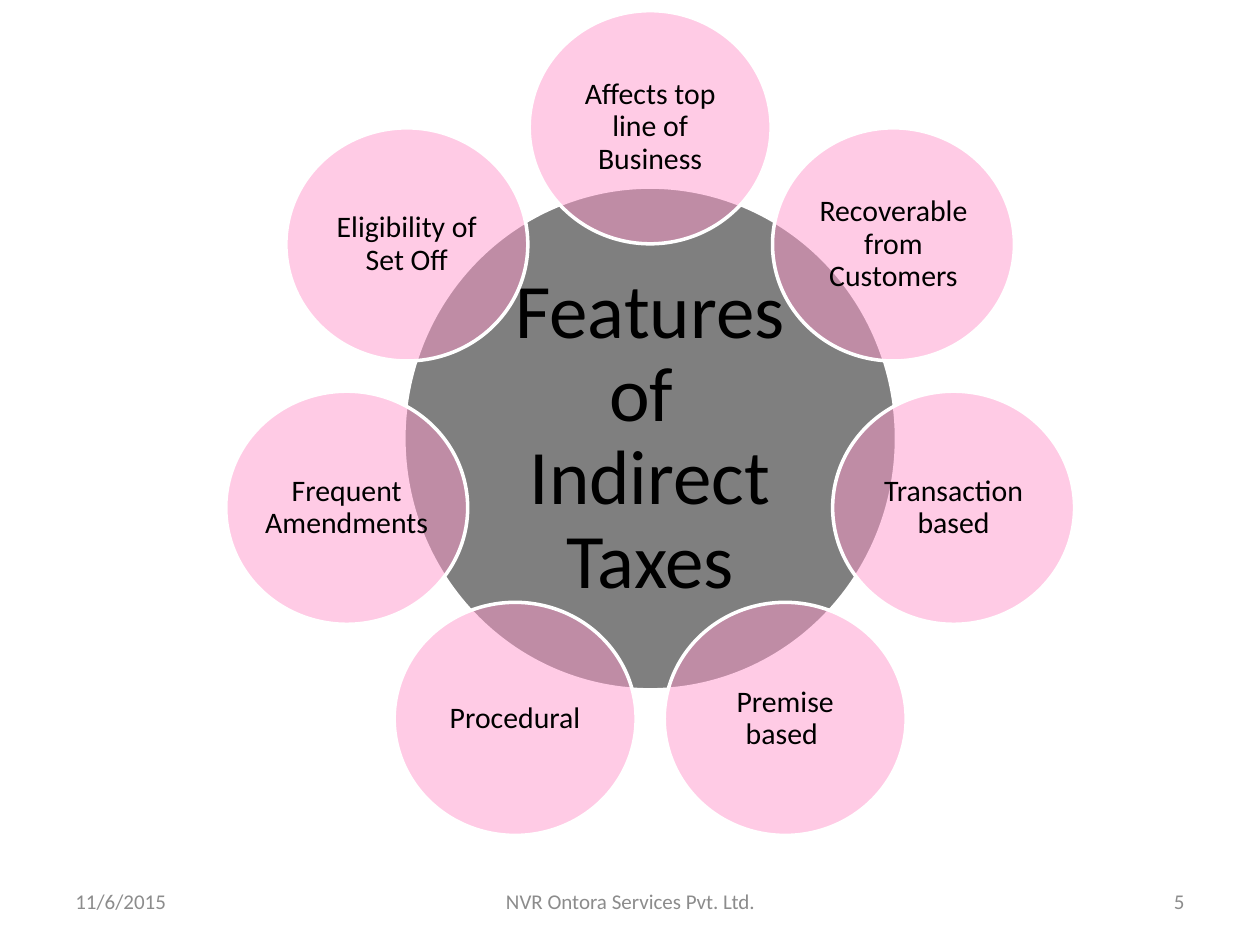
"""Build a radial slide on the features of indirect taxes."""
from dataclasses import dataclass
from math import cos, pi, sin

from lxml.etree import SubElement
from pptx import Presentation
from pptx.dml.color import RGBColor
from pptx.enum.shapes import MSO_SHAPE
from pptx.enum.text import MSO_ANCHOR, PP_ALIGN
from pptx.oxml.ns import qn
from pptx.util import Inches, Pt

HUB = "Features of \vIndirect Taxes"
FEATURES = [
    "Affects top line of Business",
    "Recoverable from Customers",
    "Transaction based",
    "Premise based ",
    "Procedural",
    "Frequent Amendments",
    "Eligibility of Set Off",
]
FOOTERS = [
    ("11/6/2015", 0.5, 2.33, PP_ALIGN.LEFT),
    ("NVR Ontora Services Pvt. Ltd.", 3.42, 3.17, PP_ALIGN.CENTER),
    ("5", 7.17, 2.33, PP_ALIGN.RIGHT),
]


@dataclass(frozen=True)
class Theme:
    font: str = "Calibri"
    text: str = "000000"
    footer: str = "8C8C8C"
    hub: str = "000000"
    feature: str = "FF99CC"
    outline: str = "FFFFFF"
    opacity: int = 50
    hub_size: int = 44
    feature_size: int = 17
    footer_size: int = 12


THEME = Theme()
SLIDE_WIDTH, SLIDE_HEIGHT = 10, 7.5
CENTER_X, CENTER_Y = 5.16, 3.48
ORBIT = 2.47
HUB_EXTENT = (3.91, 3.99)
FEATURE_EXTENT = (1.92, 1.85)
FOOTER_TOP, FOOTER_HEIGHT = 6.95, 0.4


def write(shape, text, size, color, align):
    frame = shape.text_frame
    frame.word_wrap = True
    frame.vertical_anchor = MSO_ANCHOR.MIDDLE
    paragraph = frame.paragraphs[0]
    paragraph.text = text
    paragraph.alignment = align
    paragraph.font.name = THEME.font
    paragraph.font.size = Pt(size)
    paragraph.font.color.rgb = RGBColor.from_string(color)
    return frame


def add_circle(slide, text, center, extent, fill, size, inset):
    left, top = (middle - length / 2 for middle, length in zip(center, extent))
    shape = slide.shapes.add_shape(
        MSO_SHAPE.OVAL, *map(Inches, (left, top, *extent)))
    shape.shadow.inherit = False
    shape.fill.solid()
    shape.fill.fore_color.rgb = RGBColor.from_string(fill)
    color = shape.fill._xPr.find(qn("a:solidFill"))[0]
    SubElement(color, qn("a:alpha")).set("val", str(THEME.opacity * 1000))
    shape.line.color.rgb = RGBColor.from_string(THEME.outline)
    shape.line.width = Pt(2)
    frame = write(shape, text, size, THEME.text, PP_ALIGN.CENTER)
    frame.paragraphs[0].line_spacing = 0.9
    frame.margin_left = frame.margin_right = Inches(inset)
    frame.margin_top = frame.margin_bottom = Inches(inset)


def main():
    presentation = Presentation()
    presentation.slide_width = Inches(SLIDE_WIDTH)
    presentation.slide_height = Inches(SLIDE_HEIGHT)
    slide = presentation.slides.add_slide(presentation.slide_layouts[6])

    for text, left, width, align in FOOTERS:
        box = slide.shapes.add_textbox(
            *map(Inches, (left, FOOTER_TOP, width, FOOTER_HEIGHT)))
        write(box, text, THEME.footer_size, THEME.footer, align)

    add_circle(slide, HUB, (CENTER_X, CENTER_Y), HUB_EXTENT,
               THEME.hub, THEME.hub_size, 0.06)
    for index, feature in enumerate(FEATURES):
        angle = 2 * pi * index / len(FEATURES)
        center = (CENTER_X + ORBIT * sin(angle), CENTER_Y - ORBIT * cos(angle))
        add_circle(slide, feature, center, FEATURE_EXTENT,
                   THEME.feature, THEME.feature_size, 0.02)

    presentation.save("out.pptx")


if __name__ == "__main__":
    main()
